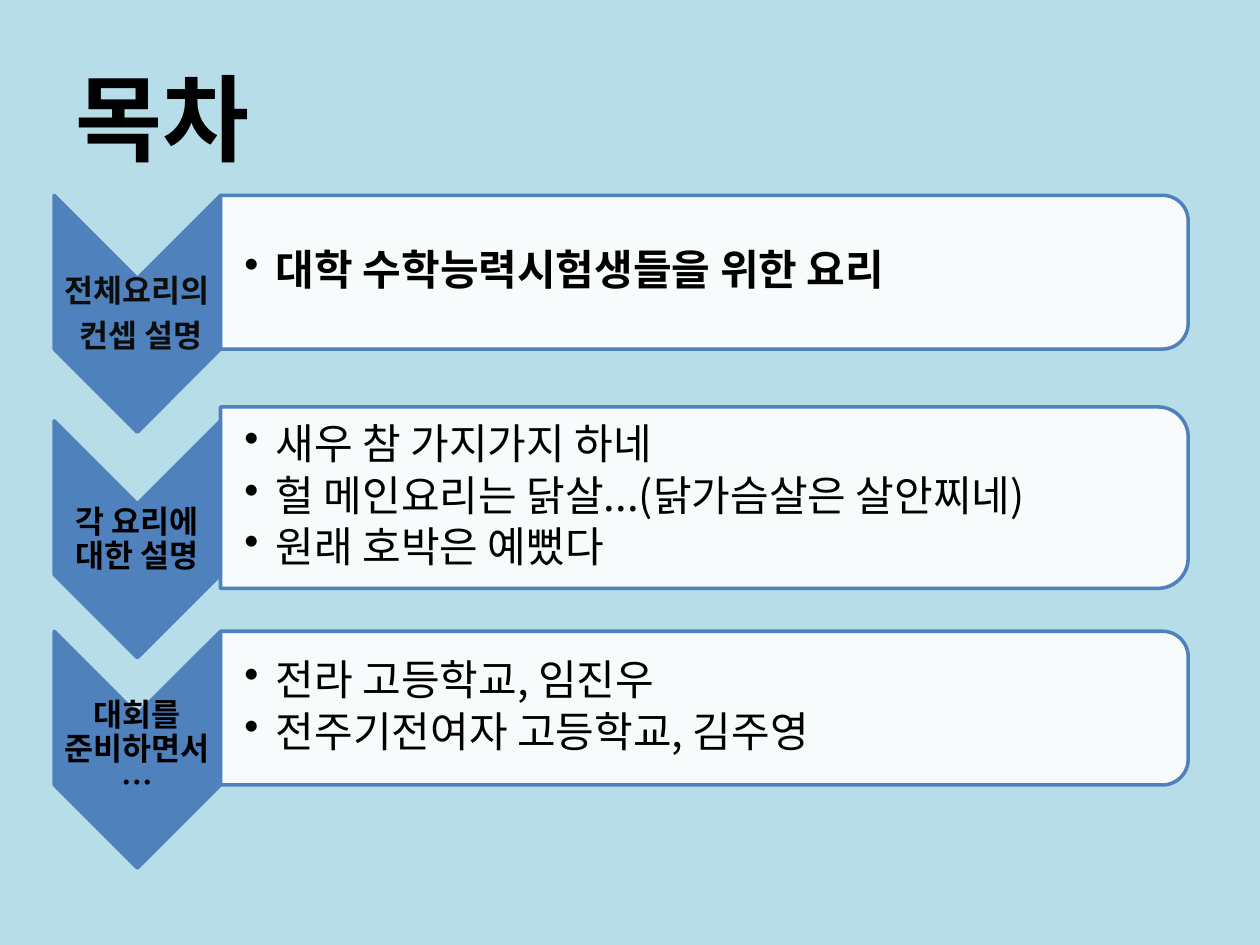
from lxml import etree
from pptx import Presentation
from pptx.dml.color import RGBColor
from pptx.enum.shapes import MSO_SHAPE
from pptx.enum.text import MSO_ANCHOR, PP_ALIGN
from pptx.oxml.ns import qn
from pptx.util import Inches, Pt

CHEVRON = MSO_SHAPE.CHEVRON
ROUND_BAR = MSO_SHAPE.ROUND_2_SAME_RECTANGLE
MIDDLE = MSO_ANCHOR.MIDDLE
LEFT, CENTER = PP_ALIGN.LEFT, PP_ALIGN.CENTER

SKY = RGBColor(0xB7, 0xDE, 0xE8)
BLUE = RGBColor(0x4F, 0x81, 0xBD)
WHITE = RGBColor(0xFF, 0xFF, 0xFF)
BLACK = RGBColor(0x00, 0x00, 0x00)
DARK = RGBColor(0x0D, 0x0D, 0x0D)
FONT = "Noto Sans CJK KR"

CHEVRON_LEFT, CHEVRON_W, CHEVRON_H = 0.43, 1.32, 1.88
BAR_LEFT, BAR_W, BAR_H = 1.75, 7.68, 1.22
LABEL_H = 0.57

# bar centre, bar height, label lines, label colour, bullets, bullets in bold
SECTIONS = [
    (2.16, BAR_H, ["전체요리의", " 컨셉 설명"], DARK,
     ["대학 수학능력시험생들을 위한 요리"], True),
    (3.95, 1.44, ["각 요리에 대한 설명"], BLACK,
     ["새우 참 가지가지 하네", "헐 메인요리는 닭살...(닭가슴살은 살안찌네)",
      "원래 호박은 예뻤다"], False),
    (5.62, BAR_H, ["대회를 준비하면서…"], BLACK,
     ["전라 고등학교, 임진우", "전주기전여자 고등학교, 김주영"], False),
]


def style_runs(p, size, color, bold):
    for r in p.runs:
        r.font.size = Pt(size)
        r.font.bold = bold
        r.font.color.rgb = color
        r.font.name = FONT
        ea = etree.SubElement(r.font._element, qn("a:ea"))
        ea.set("typeface", FONT)


def add_bullet(p):
    pPr = p._p.get_or_add_pPr()
    pPr.set("marL", str(Inches(0.25)))
    pPr.set("indent", str(-Inches(0.25)))
    etree.SubElement(pPr, qn("a:buChar")).set("char", "•")


def add_turned_shape(s, kind, left, top, width, height, fill):
    """Add a shape turned by 90 degrees that shows in the given frame."""
    sp = s.shapes.add_shape(
        kind, Inches(left + (width - height) / 2),
        Inches(top + (height - width) / 2), Inches(height), Inches(width))
    sp.rotation = 90
    sp.shadow.inherit = False
    sp.fill.solid()
    sp.fill.fore_color.rgb = fill
    sp.line.color.rgb = BLUE
    sp.line.width = Pt(2)
    return sp


def set_opacity(sp, percent):
    color = sp._element.spPr.find(qn("a:solidFill"))[0]
    etree.SubElement(color, qn("a:alpha")).set("val", str(percent * 1000))


def add_text(s, left, top, width, height, lines, size, color, bold,
             align, after, inset, left_inset, bullets=False):
    tf = s.shapes.add_textbox(Inches(left), Inches(top), Inches(width),
                              Inches(height)).text_frame
    tf.word_wrap = True
    tf.vertical_anchor = MIDDLE
    tf.margin_left = Inches(left_inset)
    tf.margin_right = tf.margin_top = tf.margin_bottom = Inches(inset)
    tf.text = "\n".join(lines)
    for p in tf.paragraphs:
        p.alignment = align
        p.line_spacing = 0.9
        p.space_after = Pt(after)
        if bullets:
            add_bullet(p)
        style_runs(p, size, color, bold)


def add_title(s, text):
    title = s.shapes.title
    title.left, title.top = Inches(0.5), Inches(0.3)
    title.width, title.height = Inches(9), Inches(1.25)
    tf = title.text_frame
    tf.text = text
    tf.vertical_anchor = MIDDLE
    p = tf.paragraphs[0]
    p.alignment = LEFT
    style_runs(p, 54, BLACK, True)


def add_section(s, center, bar_h, label, label_color, bullets, bold):
    add_turned_shape(s, CHEVRON, CHEVRON_LEFT, center - BAR_H / 2,
                     CHEVRON_W, CHEVRON_H, BLUE)
    add_text(s, CHEVRON_LEFT, center + 0.05, CHEVRON_W, LABEL_H, label,
             18, label_color, True, CENTER, 6.3, 0.01, 0.01)
    bar = add_turned_shape(s, ROUND_BAR, BAR_LEFT, center - bar_h / 2,
                           BAR_W, bar_h, WHITE)
    set_opacity(bar, 90)
    text_h = bar_h * 0.9
    add_text(s, BAR_LEFT, center - text_h / 2, BAR_W - 0.06, text_h, bullets,
             24, BLACK, bold, LEFT, 3.6, 0.02, 0.19, bullets=True)


def main():
    prs = Presentation()
    prs.slide_width, prs.slide_height = Inches(10), Inches(7.5)
    s = prs.slides.add_slide(prs.slide_layouts[5])
    s.background.fill.solid()
    s.background.fill.fore_color.rgb = SKY
    add_title(s, "목차")
    for section in SECTIONS:
        add_section(s, *section)
    prs.save("out.pptx")


if __name__ == "__main__":
    main()
